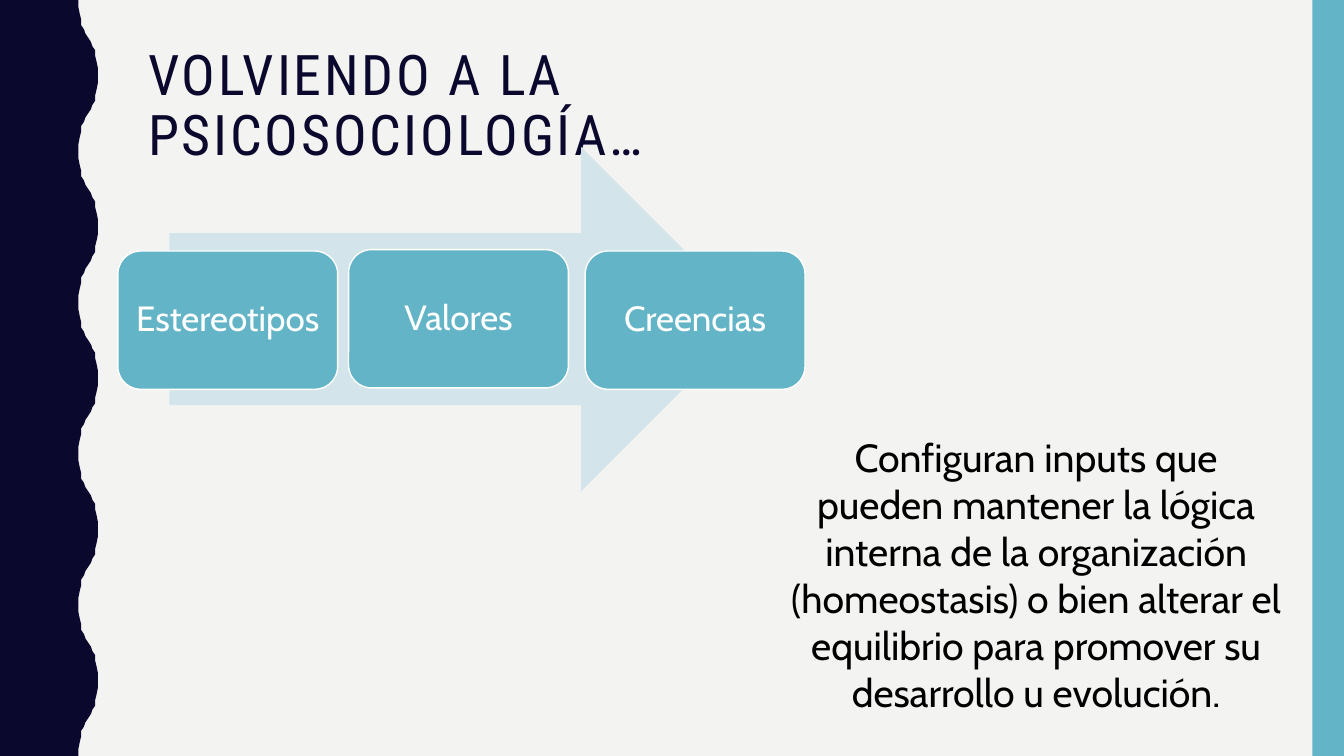
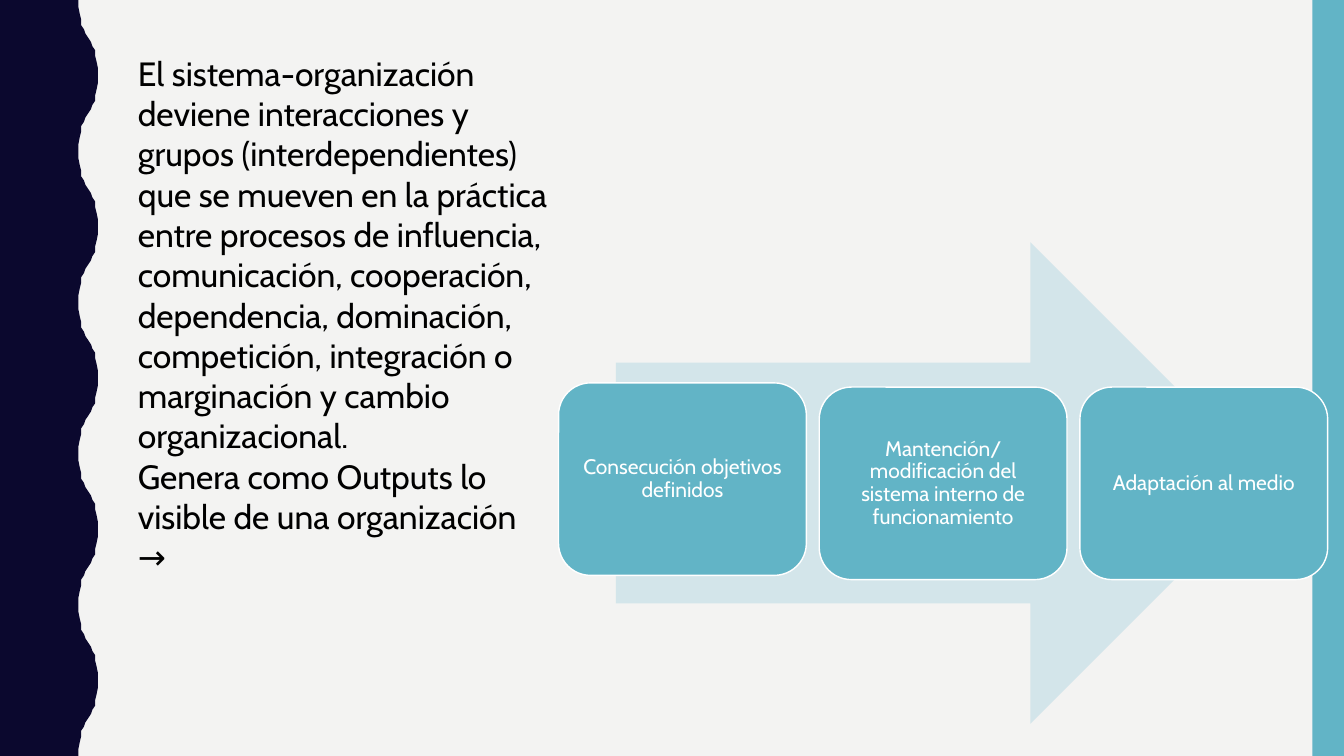
"""Builds two slides on organisational psychosociology with arrow process diagrams."""
import pptx
import pptx.dml.color
import pptx.enum.shapes
import pptx.enum.text
import pptx.util

Pt = pptx.util.Pt
SHAPE = pptx.enum.shapes.MSO_SHAPE
ALIGN = pptx.enum.text.PP_ALIGN
ANCHOR = pptx.enum.text.MSO_ANCHOR
NAVY, TEAL, PALE = "0B082E", "62B4C6", "D3E5EA"
PAPER, WHITE, BLACK = "F3F3F2", "FFFFFF", "000000"
WIDTH, HEIGHT = 960, 540
CREST = 108


def paint(shape, fill, line=None):
    """Give a shape a solid fill, an optional outline and no shadow."""
    shape.shadow.inherit = False
    shape.fill.solid()
    shape.fill.fore_color.rgb = pptx.dml.color.RGBColor.from_string(fill)
    if line:
        shape.line.color.rgb = pptx.dml.color.RGBColor.from_string(line)
        shape.line.width = Pt(1)
    else:
        shape.line.fill.background()


def write(box, lines, size, color, font="Cabin", align=ALIGN.LEFT, spacing=None):
    """Write one paragraph per line into a box and return the paragraphs."""
    box.text_frame.text = "\n".join(lines)
    box.text_frame.word_wrap = True
    for para in box.text_frame.paragraphs:
        para.alignment = align
        para.line_spacing = spacing
        para.font.name = font
        para.font.size = Pt(size)
        para.font.color.rgb = pptx.dml.color.RGBColor.from_string(color)
    return box.text_frame.paragraphs


quarter = [(56, 0), (56.2, 5), (57, 10), (57.6, 14.4),
           (58.5, 18), (59.8, 21), (61.2, 24), (63, 27)]
half = quarter + [(126 - x, CREST / 2 - y) for x, y in reversed(quarter[:-1])]
crest = half + [(x, CREST - y) for x, y in reversed(half[:-1])]
wave = [(x, y + top) for top in range(0, HEIGHT, CREST) for x, y in crest]

slides = [
    {
        "title": "VOLVIENDO A LA PSICOSOCIOLOGÍA…",
        "arrow": (121, 105, 417, 246),
        "card_size": (157, 98.8), "font_size": 25, "inset": 7,
        "cards": [("Estereotipos", 84.2, 179.3), ("Valores", 249, 178.3),
                  ("Creencias", 418, 179.3)],
        "body": ["Configuran inputs que pueden mantener la lógica interna de la "
                 "organización (homeostasis) o bien alterar el equilibrio para "
                 "promover su desarrollo u evolución."],
        "body_at": (556.5, 306, 367, 211), "body_size": 28, "body_align": ALIGN.CENTER,
    },
    {
        "title": None,
        "arrow": (440, 173, 468, 344),
        "card_size": (177, 137.5), "font_size": 15, "inset": 4.5,
        "cards": [("Consecución objetivos definidos", 399, 273.5),
                  ("Mantención/modificación del sistema interno de funcionamiento",
                   585.2, 276.5),
                  ("Adaptación al medio", 771.4, 276.5)],
        "body": ["El sistema-organización deviene interacciones y grupos "
                 "(interdependientes) que se mueven en la práctica entre procesos de "
                 "influencia, comunicación, cooperación, dependencia, dominación, "
                 "competición, integración o marginación y cambio organizacional.",
                 "Genera como Outputs lo visible de una organización →"],
        "body_at": (91.4, 34, 307.5, 385), "body_size": 24, "body_align": ALIGN.LEFT,
    },
]

deck = pptx.Presentation()
deck.slide_width, deck.slide_height = Pt(WIDTH), Pt(HEIGHT)

for content in slides:
    page = deck.slides.add_slide(deck.slide_layouts[6])
    page.background.fill.solid()
    page.background.fill.fore_color.rgb = pptx.dml.color.RGBColor.from_string(PAPER)

    outline = page.shapes.build_freeform(0, 0, scale=Pt(1))
    outline.add_line_segments(wave + [(0, HEIGHT)], close=True)
    paint(outline.convert_to_shape(), NAVY)
    band = page.shapes.add_shape(SHAPE.RECTANGLE, Pt(937.5), 0, Pt(22.5), Pt(HEIGHT))
    paint(band, TEAL)

    if content["title"]:
        heading = page.shapes.add_textbox(Pt(98.8), Pt(30), Pt(640), Pt(53))
        for para in write(heading, [content["title"]], 40, NAVY,
                          "Roboto Condensed", spacing=0.9):
            para.runs[0].font._element.set("spc", "200")

    arrow = page.shapes.add_shape(SHAPE.RIGHT_ARROW, *map(Pt, content["arrow"]))
    paint(arrow, PALE)

    for label, left, top in content["cards"]:
        card = page.shapes.add_shape(SHAPE.ROUNDED_RECTANGLE, Pt(left), Pt(top),
                                     *map(Pt, content["card_size"]))
        paint(card, TEAL, WHITE)
        write(card, [label], content["font_size"], WHITE,
              align=ALIGN.CENTER, spacing=0.9)
        frame = card.text_frame
        frame.vertical_anchor = ANCHOR.MIDDLE
        frame.margin_left = frame.margin_right = Pt(content["inset"])
        frame.margin_top = frame.margin_bottom = Pt(content["inset"])

    body = page.shapes.add_textbox(*map(Pt, content["body_at"]))
    write(body, content["body"], content["body_size"], BLACK,
          align=content["body_align"])

deck.save("out.pptx")
